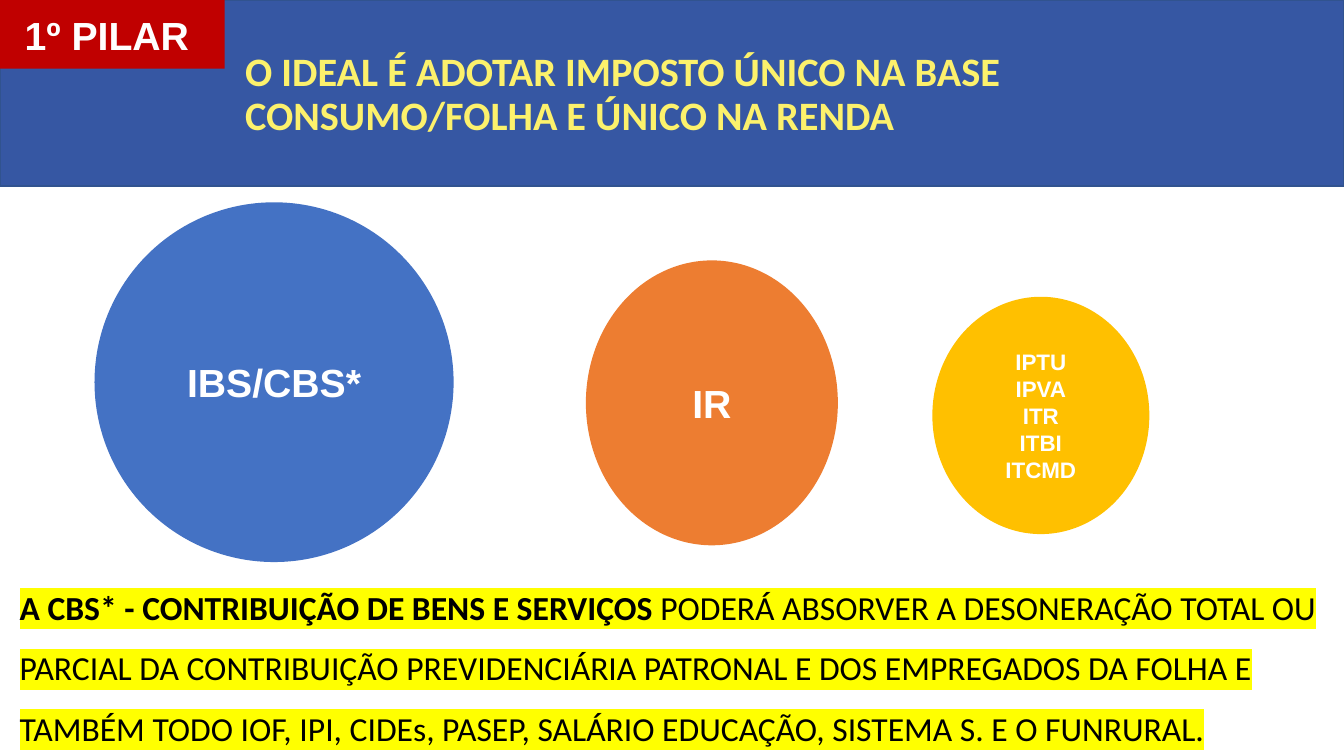
from lxml.etree import SubElement
from pptx import Presentation
from pptx.dml.color import RGBColor
from pptx.enum.shapes import MSO_SHAPE
from pptx.enum.text import MSO_ANCHOR, PP_ALIGN
from pptx.oxml.ns import qn
from pptx.util import Pt

COLORS = {
    "band": "3657A3", "edge": "31538F", "tag": "C00000", "title": "FCF16C",
    "blue": "4472C4", "orange": "ED7D31", "gold": "FFC000",
    "white": "FFFFFF", "black": "000000", "mark": "FFFF00",
}


def color(name):
    return RGBColor.from_string(COLORS[name])


def style(run, size, name, tint, bold=True):
    font = run.font
    font.size, font.name, font.bold = Pt(size), name, bold
    font.color.rgb = color(tint)


def mark(run):
    """Highlight a run; the element must stand before the font name."""
    props = run.font._element
    light = SubElement(props, qn("a:highlight"))
    SubElement(light, qn("a:srgbClr"), val=COLORS["mark"])
    props.find(qn("a:latin")).addprevious(light)


def add_form(slide, kind, box, fill, edge=None):
    form = slide.shapes.add_shape(kind, *map(Pt, box))
    form.shadow.inherit = False
    form.fill.solid()
    form.fill.fore_color.rgb = color(fill)
    if edge:
        form.line.color.rgb = color(edge)
        form.line.width = Pt(1)
    else:
        form.line.fill.background()
    return form


def add_label(slide, kind, box, fill, text, size):
    """Filled shape with centred white text."""
    frame = add_form(slide, kind, box, fill).text_frame
    frame.text = text
    frame.word_wrap = True
    frame.vertical_anchor = MSO_ANCHOR.MIDDLE
    for para in frame.paragraphs:
        para.alignment = PP_ALIGN.CENTER
        style(para.runs[0], size, "Arial", "white")


def add_text(slide, box):
    frame = slide.shapes.add_textbox(*map(Pt, box)).text_frame
    frame.word_wrap = True
    return frame


def add_header(slide, left, top, width, height):
    # Blue band
    add_form(slide, MSO_SHAPE.RECTANGLE, (left, top, width, height),
             "band", "edge")
    # Red tag in the corner
    add_label(slide, MSO_SHAPE.RECTANGLE, (left, top, 160.5, 49),
              "tag", "1º PILAR ", 28)
    # Title
    frame = add_text(slide, (left + 168, top + 18, 564, 100))
    frame.vertical_anchor = MSO_ANCHOR.MIDDLE
    para = frame.paragraphs[0]
    para.text = ("O IDEAL É ADOTAR IMPOSTO ÚNICO NA BASE "
                 "CONSUMO/FOLHA E ÚNICO NA RENDA")
    para.line_spacing = 0.9
    style(para.runs[0], 28.8, "Calibri", "title")


def add_taxes(slide, left, top):
    # Offset and size of each circle, fill, text, text size
    taxes = [
        (0, 0, 256.5, 257, "blue", "IBS/CBS*", 28),
        (351, 41.5, 180, 203.5, "orange", "IR", 28),
        (598.5, 67.5, 155, 169.5, "gold", "IPTU\nIPVA\nITR\nITBI\nITCMD", 16),
    ]
    for dx, dy, width, height, fill, text, size in taxes:
        add_label(slide, MSO_SHAPE.OVAL, (left + dx, top + dy, width, height),
                  fill, text, size)


def add_note(slide, *box):
    para = add_text(slide, box).paragraphs[0]
    para.line_spacing = 1.5
    parts = [
        ("A CBS* - CONTRIBUIÇÃO DE BENS E SERVIÇOS ", True),
        ("PODERÁ ABSORVER A DESONERAÇÃO TOTAL OU PARCIAL DA CONTRIBUIÇÃO "
         "PREVIDENCIÁRIA PATRONAL E DOS EMPREGADOS DA FOLHA E TAMBÉM TODO "
         "IOF, IPI, CIDEs, PASEP, SALÁRIO EDUCAÇÃO, SISTEMA S. E O "
         "FUNRURAL.", False),
    ]
    for text, bold in parts:
        run = para.add_run()
        run.text = text
        style(run, 24, "Calibri", "black", bold)
        mark(run)


def main():
    deck = Presentation()
    deck.slide_width, deck.slide_height = Pt(960), Pt(540)
    slide = deck.slides.add_slide(deck.slide_layouts[6])
    add_header(slide, 0, 0, 960, 133)
    add_taxes(slide, 67.5, 144.5)
    add_note(slide, 7, 401, 947, 134)
    deck.save("out.pptx")


if __name__ == "__main__":
    main()
